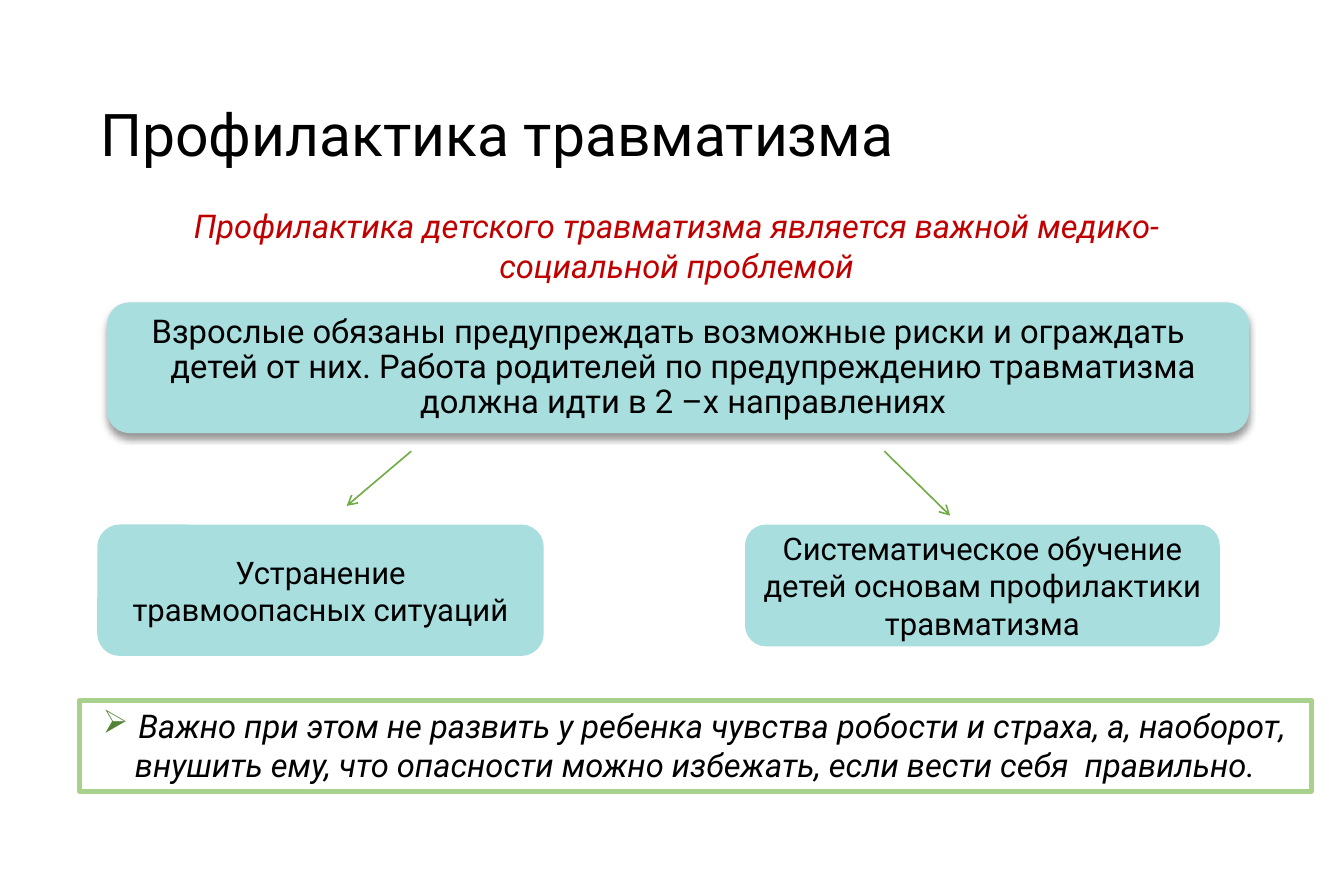
from lxml import etree
from pptx import Presentation
from pptx.dml.color import RGBColor
from pptx.enum.shapes import MSO_CONNECTOR, MSO_SHAPE
from pptx.enum.text import MSO_ANCHOR, MSO_AUTO_SIZE, PP_ALIGN
from pptx.oxml import parse_xml
from pptx.oxml.ns import nsdecls, qn
from pptx.util import Inches, Pt

ROUNDED, RECTANGLE = MSO_SHAPE.ROUNDED_RECTANGLE, MSO_SHAPE.RECTANGLE
STRAIGHT = MSO_CONNECTOR.STRAIGHT
LEFT, CENTER = PP_ALIGN.LEFT, PP_ALIGN.CENTER
TOP, MIDDLE = MSO_ANCHOR.TOP, MSO_ANCHOR.MIDDLE
NO_AUTOFIT = MSO_AUTO_SIZE.NONE

SLIDE_WIDTH, SLIDE_HEIGHT = Inches(11.42), Inches(7.5)
FONT = "Roboto"
TEAL, GREEN, PALE_GREEN, DARK_GREEN = "A9DEDF", "70AD47", "A9D18E", "548235"
BLACK, RED, WHITE = "000000", "C00000", "FFFFFF"


def color(value):
    return RGBColor.from_string(value)


def point(x, y):
    """Convert percentages of the slide to a position."""
    return int(SLIDE_WIDTH * x / 100), int(SLIDE_HEIGHT * y / 100)


def place(shape, area):
    shape.left, shape.top = point(*area[:2])
    shape.width, shape.height = point(*area[2:])


def write(shape, text, size, align=CENTER, anchor=MIDDLE, ink=BLACK,
          italic=False, spacing=1.0, inset=0.1):
    frame = shape.text_frame
    frame.text = text
    frame.word_wrap = True
    frame.auto_size = NO_AUTOFIT
    frame.vertical_anchor = anchor
    frame.margin_left = frame.margin_right = Inches(inset)
    paragraph = frame.paragraphs[0]
    paragraph.alignment = align
    paragraph.line_spacing = spacing
    paragraph.space_before = Pt(0)
    for run in paragraph.runs:
        run.font.name = FONT
        run.font.size = Pt(size)
        run.font.italic = italic
        run.font.color.rgb = color(ink)
    return paragraph


def add_box(slide, kind, area, fill, line, line_width):
    shape = slide.shapes.add_shape(kind, *point(*area[:2]), *point(*area[2:]))
    shape.shadow.inherit = False
    shape.fill.solid()
    shape.fill.fore_color.rgb = color(fill)
    shape.line.color.rgb = color(line)
    shape.line.width = Pt(line_width)
    return shape


def add_drop_shadow(shape):
    effects = shape._element.spPr.find(qn("a:effectLst"))
    effects.append(parse_xml(
        f'<a:outerShdw {nsdecls("a")} blurRad="{Pt(4)}" dist="{Pt(3)}" '
        f'dir="5400000" rotWithShape="0"><a:srgbClr val="{BLACK}">'
        '<a:alpha val="40000"/></a:srgbClr></a:outerShdw>'))


def add_arrow(slide, start, end):
    connector = slide.shapes.add_connector(STRAIGHT, *point(*start), *point(*end))
    connector.line.color.rgb = color(GREEN)
    connector.line.width = Pt(1)
    line = connector.line._get_or_add_ln()
    etree.SubElement(line, qn("a:tailEnd"), type="arrow")
    etree.SubElement(connector._element.spPr, qn("a:effectLst"))


def add_bullet(paragraph, symbol, ink):
    properties = paragraph._p.get_or_add_pPr()
    bullet_color = etree.SubElement(properties, qn("a:buClr"))
    etree.SubElement(bullet_color, qn("a:srgbClr"), val=ink)
    etree.SubElement(properties, qn("a:buChar"), char=symbol)


def main():
    presentation = Presentation()
    presentation.slide_width, presentation.slide_height = SLIDE_WIDTH, SLIDE_HEIGHT
    slide = presentation.slides.add_slide(presentation.slide_layouts[1])
    title, body = slide.placeholders

    # Title and subtitle
    place(title, (6.6, 5.9, 86.3, 19.3))
    write(title, "Профилактика травматизма", 36, align=LEFT, spacing=0.9)
    subtitle = slide.shapes.add_textbox(*point(8.6, 22.7), *point(83.5, 10.3))
    write(subtitle, "Профилактика детского травматизма является важной "
          "медико-социальной проблемой", 20, anchor=TOP, ink=RED, italic=True)

    # Main statement over its banner
    banner = add_box(slide, ROUNDED, (8, 34.3, 84.9, 14.7), TEAL, TEAL, 0.5)
    add_drop_shadow(banner)
    slide.shapes._spTree.insert(2, banner._element)
    place(body, (6.6, 34.3, 86.3, 14.7))
    statement = write(
        body, "Взрослые обязаны предупреждать возможные риски и ограждать детей "
        "от них. Работа родителей по предупреждению травматизма должна идти "
        "в 2 –х направлениях", 20, spacing=0.9, inset=0.2)
    properties = statement._p.get_or_add_pPr()
    properties.set("marL", str(Inches(0.25)))
    properties.set("indent", str(-Inches(0.25)))
    etree.SubElement(properties, qn("a:buNone"))

    # Two directions of work
    add_arrow(slide, (30.6, 51.1), (25.8, 57.3))
    add_arrow(slide, (65.8, 51.1), (70.7, 58.4))
    directions = [
        ((7.3, 59.5, 33.1, 14.7), "Устранение травмоопасных ситуаций", 0.2),
        ((55.5, 59.5, 35.2, 13.6),
         "Систематическое обучение детей основам профилактики травматизма", 0.1),
    ]
    for area, text, inset in directions:
        box = add_box(slide, ROUNDED, area, TEAL, TEAL, 1)
        write(box, text, 19, inset=inset)

    # Closing note
    note = add_box(slide, RECTANGLE, (5.9, 79.3, 91.7, 10.3), WHITE, PALE_GREEN, 3)
    advice = write(
        note, " Важно при этом не развить у ребенка чувства робости и страха, "
        "а, наоборот, внушить ему, что опасности можно избежать, если вести "
        "себя  правильно.", 20, anchor=TOP, italic=True)
    add_bullet(advice, "➢", DARK_GREEN)

    presentation.save("out.pptx")


if __name__ == "__main__":
    main()
